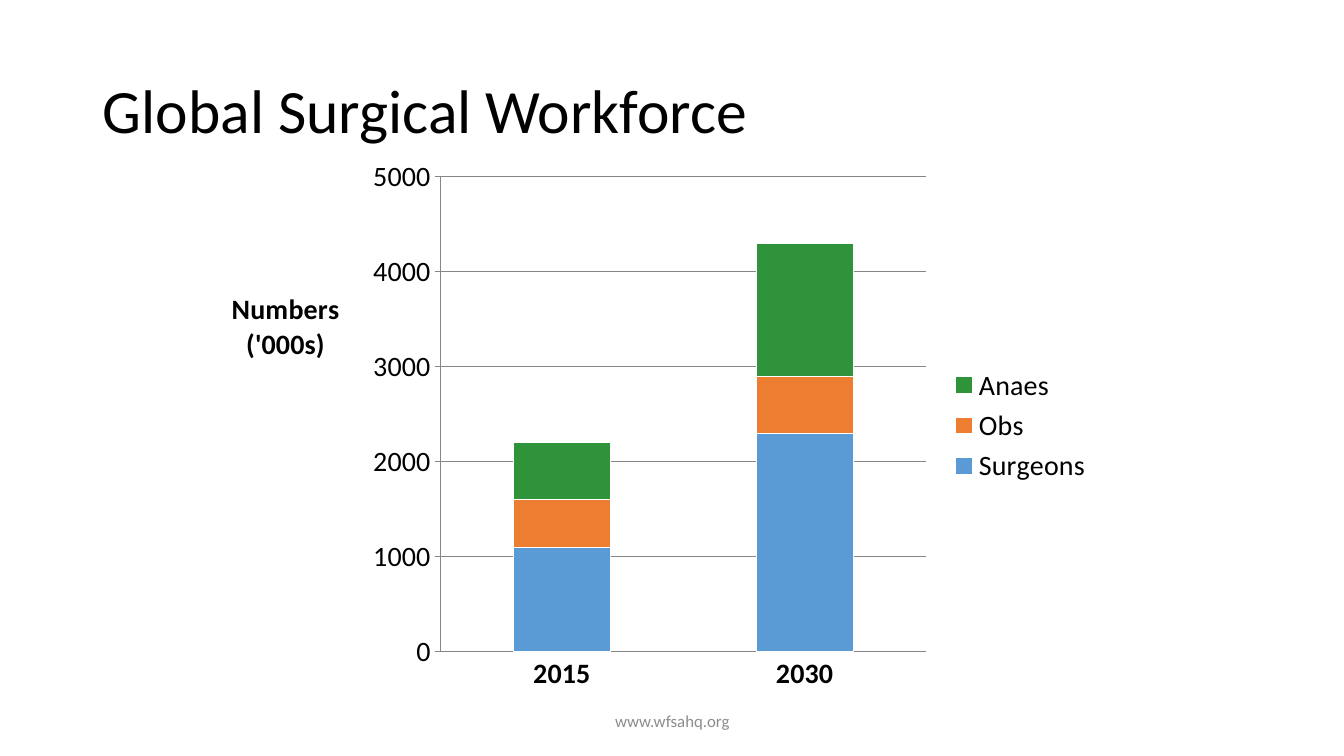
"""Build the Global Surgical Workforce slide with a stacked column chart."""
from dataclasses import dataclass

from lxml.etree import SubElement
from pptx import Presentation
from pptx.chart.data import CategoryChartData as ChartData
from pptx.dml.color import RGBColor as Rgb
from pptx.enum.chart import XL_CHART_TYPE as ChartType
from pptx.enum.chart import XL_LEGEND_POSITION as LegendPosition
from pptx.enum.chart import XL_TICK_MARK as TickMark
from pptx.enum.text import MSO_ANCHOR as Anchor
from pptx.enum.text import PP_ALIGN as Align
from pptx.oxml.ns import qn
from pptx.util import Cm, Pt


@dataclass(frozen=True)
class Theme:
    font: str = "Calibri"
    text: str = "000000"
    muted: str = "8C8C8C"
    grid: str = "868686"
    edge: str = "FFFFFF"
    title_size: int = 44
    chart_size: int = 20
    footer_size: int = 12
    line_width: float = 0.75


theme = Theme()


def style_font(font, size, color=theme.text, bold=False):
    font.name = theme.font
    font.size = Pt(size)
    font.bold = bold
    font.color.rgb = Rgb.from_string(color)


def place_element(parent, **fractions):
    layout = parent.find(qn("c:layout"))
    if layout is None:
        layout = SubElement(parent, qn("c:layout"))
    manual = SubElement(layout, qn("c:manualLayout"))
    for tag, value in fractions.items():
        SubElement(manual, qn(f"c:{tag}")).set("val", str(value))


presentation = Presentation()
presentation.slide_width = Cm(33.87)
presentation.slide_height = Cm(19.05)
slide = presentation.slides.add_slide(presentation.slide_layouts[5])

title = slide.shapes.title
title.left, title.top, title.width, title.height = Cm(2.34), Cm(1.02), Cm(29.21), Cm(3.68)
title.text_frame.vertical_anchor = Anchor.MIDDLE
paragraph = title.text_frame.paragraphs[0]
paragraph.alignment = Align.LEFT
paragraph.line_spacing = 0.9
run = paragraph.add_run()
run.text = "Global Surgical Workforce"
style_font(run.font, theme.title_size)

footer = slide.shapes.add_textbox(Cm(11.23), Cm(17.65), Cm(11.43), Cm(1.02))
footer.text_frame.word_wrap = True
footer.text_frame.vertical_anchor = Anchor.MIDDLE
paragraph = footer.text_frame.paragraphs[0]
paragraph.alignment = Align.CENTER
run = paragraph.add_run()
run.text = "www.wfsahq.org"
style_font(run.font, theme.footer_size, theme.muted)

workforce = [
    ("Surgeons", (1100, 2300), "5B9BD5"),
    ("Obs", (500, 600), "ED7D31"),
    ("Anaes", (600, 1400), "2E9339"),
]
chart_data = ChartData()
chart_data.categories = ["2015", "2030"]
for name, values, color in workforce:
    chart_data.add_series(name, values)
chart = slide.shapes.add_chart(
    ChartType.COLUMN_STACKED, Cm(5.54), Cm(3.76), Cm(22.25), Cm(13.92), chart_data
).chart
chart.has_title = False
style_font(chart.font, theme.chart_size)

plot = chart.plots[0]
plot.gap_width = 150
plot.overlap = 100
plot.vary_by_categories = False
for series, (name, values, color) in zip(plot.series, workforce):
    series.format.fill.solid()
    series.format.fill.fore_color.rgb = Rgb.from_string(color)
    series.format.line.color.rgb = Rgb.from_string(theme.edge)
    series.format.line.width = Pt(theme.line_width)

category_axis, value_axis = chart.category_axis, chart.value_axis
category_axis.major_tick_mark = TickMark.NONE
value_axis.major_tick_mark = TickMark.OUTSIDE
value_axis.minimum_scale = 0
value_axis.maximum_scale = 5000
value_axis.major_unit = 1000
value_axis.has_major_gridlines = True
style_font(category_axis.tick_labels.font, theme.chart_size, bold=True)
style_font(value_axis.tick_labels.font, theme.chart_size)
for line in (category_axis.format.line, value_axis.format.line,
             value_axis.major_gridlines.format.line):
    line.color.rgb = Rgb.from_string(theme.grid)
    line.width = Pt(theme.line_width)

axis_frame = value_axis.axis_title.text_frame
for index, words in enumerate(("Numbers", "('000s)")):
    paragraph = axis_frame.add_paragraph() if index else axis_frame.paragraphs[0]
    paragraph.alignment = Align.CENTER
    run = paragraph.add_run()
    run.text = words
    style_font(run.font, theme.chart_size, bold=True)
axis_title = value_axis.axis_title._element
body = axis_title.find(f".//{qn('a:bodyPr')}")
body.set("rot", "0")
body.set("vert", "horz")
place_element(axis_title, xMode="edge", yMode="edge", x=0.01, y=0.25)

place_element(chart._chartSpace.chart.plotArea, layoutTarget="inner", xMode="edge",
              yMode="edge", x=0.25, y=0.05, w=0.55, h=0.86)

chart.has_legend = True
chart.legend.position = LegendPosition.RIGHT
chart.legend.include_in_layout = False
style_font(chart.legend.font, theme.chart_size)

presentation.save("out.pptx")
